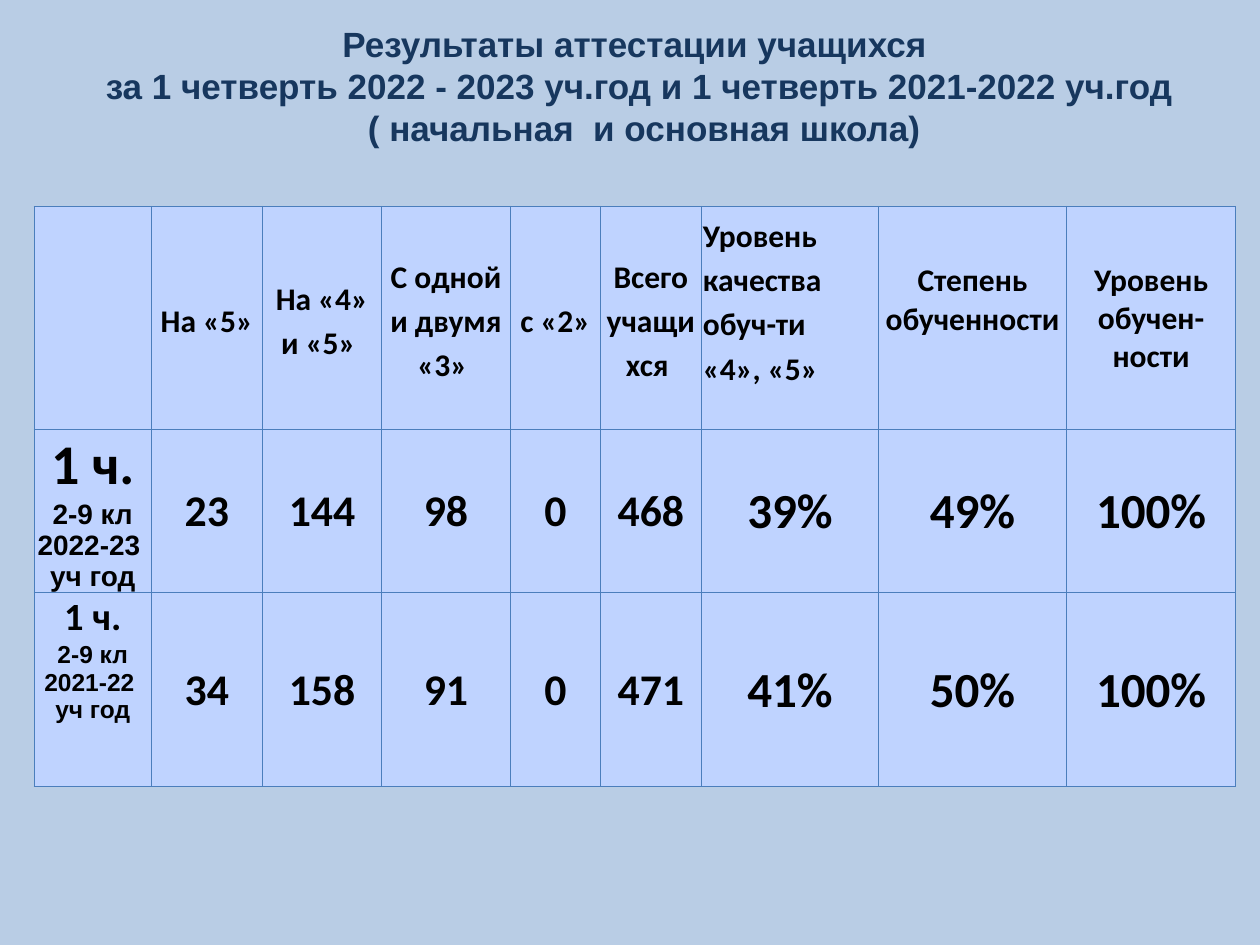
import lxml.etree
import pptx
import pptx.dml.color
import pptx.enum.text
import pptx.oxml.ns
import pptx.util

Cm = pptx.util.Cm
Pt = pptx.util.Pt
RGBColor = pptx.dml.color.RGBColor
PP_ALIGN = pptx.enum.text.PP_ALIGN
MIDDLE = pptx.enum.text.MSO_ANCHOR.MIDDLE
TOP = pptx.enum.text.MSO_ANCHOR.TOP

BACKGROUND = RGBColor(0xB9, 0xCD, 0xE5)
CELL_FILL = RGBColor(0xBF, 0xD3, 0xFF)
BORDER = RGBColor(0x4B, 0x7E, 0xBC)
NAVY = RGBColor(0x17, 0x37, 0x5E)
BLACK = RGBColor(0, 0, 0)

TITLE = [
    "Результаты аттестации учащихся ",
    "за 1 четверть 2022 - 2023 уч.год и 1 четверть 2021-2022 уч.год",
    " ( начальная  и основная школа)",
]
COUNT_HEADERS = ["На «5» ", "На «4» и «5» ", "С одной и двумя «3» ",
                 "с «2» ", "Всего учащихся "]
# Period, label sizes (heading, details), label anchor, values
PERIODS = [
    ("2022-23 ", 32, 16, MIDDLE,
     ["23", "144", "98", "0", "468", "39%", "49%", "100%"]),
    ("2021-22 ", 22, 14, TOP,
     ["34", "158", "91", "0", "471", "41%", "50%", "100%"]),
]
COLUMN_WIDTHS = [2.36, 2.24, 2.4, 2.6, 1.81, 2.04, 3.57, 3.79, 3.41]
ROW_HEIGHTS = [4.5, 3.28, 3.9]


def write_lines(frame, lines, size, color=BLACK, font="Calibri",
                align=PP_ALIGN.CENTER, spacing=None):
    """Write one bold paragraph per line."""
    for index, line in enumerate(lines):
        paragraph = frame.paragraphs[0] if index == 0 else frame.add_paragraph()
        paragraph.text = line
        paragraph.alignment = align
        paragraph.space_before = Pt(0)
        if spacing:
            paragraph.line_spacing = spacing
        paragraph.font.name = font
        paragraph.font.size = Pt(size)
        paragraph.font.bold = True
        paragraph.font.color.rgb = color


def add_borders(cell):
    properties = cell._tc.get_or_add_tcPr()
    for side in ("a:lnL", "a:lnR", "a:lnT", "a:lnB"):
        line = lxml.etree.SubElement(properties, pptx.oxml.ns.qn(side),
                                     w=str(Pt(0.75)))
        fill = lxml.etree.SubElement(line, pptx.oxml.ns.qn("a:solidFill"))
        lxml.etree.SubElement(fill, pptx.oxml.ns.qn("a:srgbClr"),
                              val=str(BORDER))


def format_cell(cell, side_margin=0.03, bottom_margin=0.0, anchor=MIDDLE):
    cell.vertical_anchor = anchor
    cell.margin_left = cell.margin_right = Cm(side_margin)
    cell.margin_top = Cm(0.03)
    cell.margin_bottom = Cm(bottom_margin)


def add_title(slide):
    title = slide.shapes.title
    title.left, title.top = Cm(1.09), Cm(0.33)
    title.width, title.height = Cm(23.6), Cm(2.82)
    title.text_frame.vertical_anchor = TOP
    write_lines(title.text_frame, TITLE, 20, NAVY, "Arial")


def add_results_table(slide):
    results = slide.shapes.add_table(
        len(ROW_HEIGHTS), len(COLUMN_WIDTHS), Cm(0.69), Cm(4.16),
        Cm(sum(COLUMN_WIDTHS)), Cm(sum(ROW_HEIGHTS))).table
    results.first_row = results.horz_banding = False
    for column, width in zip(results.columns, COLUMN_WIDTHS):
        column.width = Cm(width)
    for row, height in zip(results.rows, ROW_HEIGHTS):
        row.height = Cm(height)
    for cell in results.iter_cells():
        add_borders(cell)
        cell.fill.solid()
        cell.fill.fore_color.rgb = CELL_FILL
        format_cell(cell)
    return results


def fill_headers(results):
    for column, header in enumerate(COUNT_HEADERS, start=1):
        cell = results.cell(0, column)
        format_cell(cell, side_margin=0.13)
        write_lines(cell.text_frame, [header], 18, spacing=1.15)

    quality, degree, level = (results.cell(0, column) for column in (6, 7, 8))
    format_cell(quality, bottom_margin=0.75)
    write_lines(quality.text_frame, ["Уровень качества обуч-ти", "«4», «5»"],
                18, align=PP_ALIGN.LEFT, spacing=1.15)
    format_cell(degree, bottom_margin=0.75)
    write_lines(degree.text_frame, ["Степень обученности"], 18)
    write_lines(level.text_frame, ["Уровень обучен-ности"], 18)


def fill_period(results, row, period):
    years, heading_size, detail_size, anchor, values = period
    label = results.cell(row, 0)
    format_cell(label, anchor=anchor)
    write_lines(label.text_frame, ["1 ч.", "2-9 кл", years, "уч год"],
                detail_size, font="Arial")
    heading = label.text_frame.paragraphs[0]
    heading.font.name = "Calibri"
    heading.font.size = Pt(heading_size)
    for column, value in enumerate(values, start=1):
        size = 28 if value.endswith("%") else 25
        write_lines(results.cell(row, column).text_frame, [value], size)


def main():
    presentation = pptx.Presentation()
    presentation.slide_width, presentation.slide_height = Cm(25.4), Cm(19.05)
    slide = presentation.slides.add_slide(presentation.slide_layouts[5])
    slide.background.fill.solid()
    slide.background.fill.fore_color.rgb = BACKGROUND

    results = add_results_table(slide)
    fill_headers(results)
    for row, period in enumerate(PERIODS, start=1):
        fill_period(results, row, period)
    add_title(slide)
    presentation.save("out.pptx")


if __name__ == "__main__":
    main()
